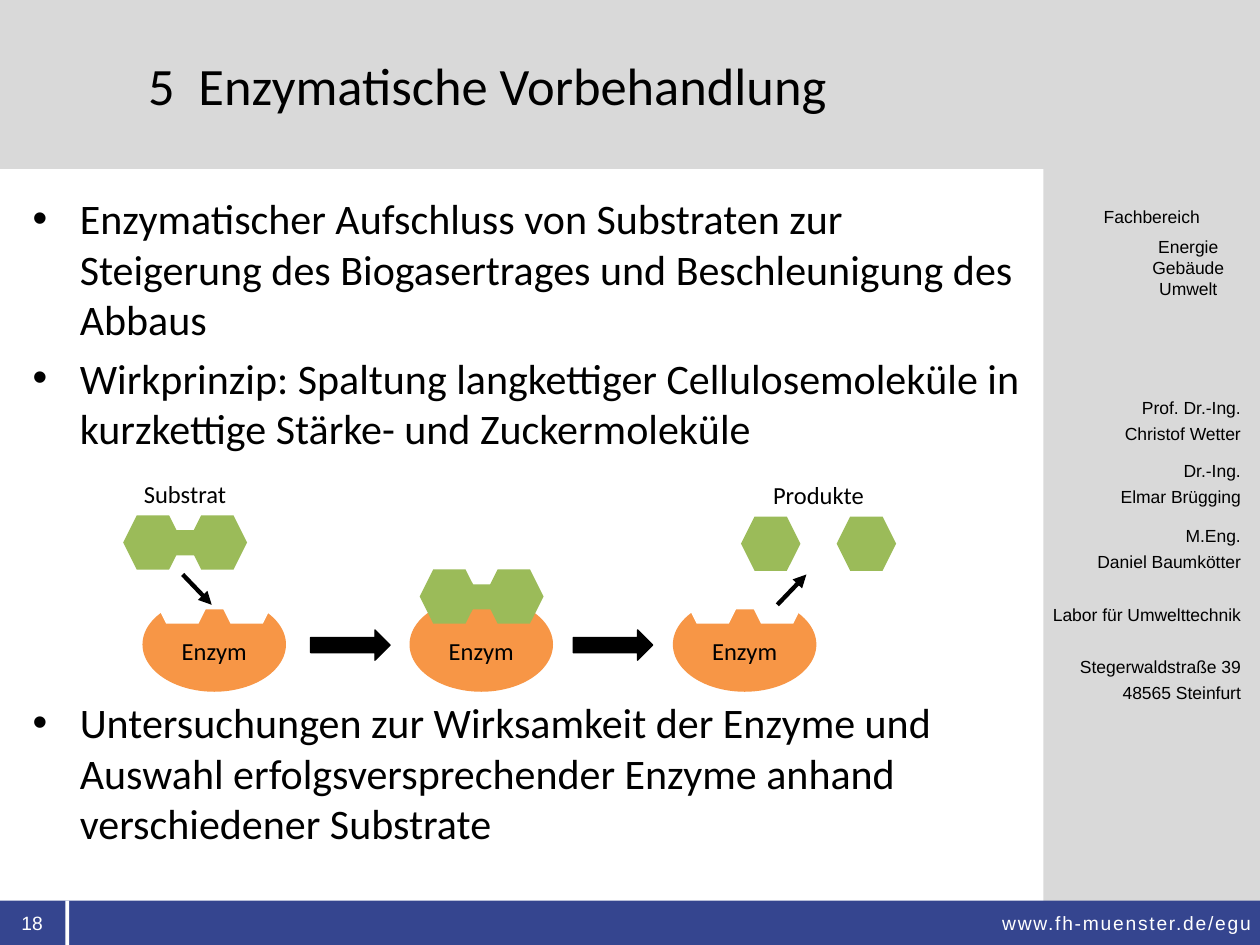
from pptx import Presentation
from pptx import util as u
from pptx.dml.color import RGBColor
from pptx.enum import shapes, text
from pptx.oxml.ns import qn
from lxml import etree

Pt = u.Pt
SHAPE = shapes.MSO_SHAPE
ALIGN = text.PP_ALIGN
MIDDLE = text.MSO_ANCHOR.MIDDLE
BLACK = RGBColor(0x00, 0x00, 0x00)
WHITE = RGBColor(0xFF, 0xFF, 0xFF)
GRAY = RGBColor(0xD9, 0xD9, 0xD9)
BLUE = RGBColor(0x35, 0x45, 0x8F)
ORANGE = RGBColor(0xF7, 0x96, 0x46)
GREEN = RGBColor(0x9B, 0xBB, 0x59)

BODY = {"name": "Calibri", "size": Pt(24)}
LABEL = {"name": "Calibri", "size": Pt(14)}
SIDE = {"name": "Arial", "size": Pt(10)}
FOOT = {"name": "Arial", "size": Pt(11)}


class SlideBuilder:
    """Holds the style and the current slide and adds each kind of element."""

    def __init__(self, prs):
        self.s = prs.slides.add_slide(prs.slide_layouts[5])

    def format(self, target, **values):
        for name, value in values.items():
            setattr(target, name, value)

    def fill_text(self, tf, lines, font, color=BLACK, align=ALIGN.CENTER,
                  gaps=(), spacing=None, bullet=False, tracking=None):
        for i, line in enumerate(lines):
            p = tf.paragraphs[0] if i == 0 else tf.add_paragraph()
            gap = gaps[i] if gaps else 0
            self.format(p, alignment=align, space_before=Pt(gap),
                        line_spacing=spacing)
            if bullet:
                pPr = p._p.get_or_add_pPr()
                pPr.set("marL", str(Pt(27)))
                pPr.set("indent", str(Pt(-27)))
                etree.SubElement(pPr, qn("a:buFont")).set("typeface", "Arial")
                etree.SubElement(pPr, qn("a:buChar")).set("char", "•")
            r = p.add_run()
            r.text = line
            self.format(r.font, **font)
            r.font.color.rgb = color
            if tracking:
                r.font._element.set("spc", str(tracking))

    def title(self, x, y, w, h, line):
        sp = self.s.shapes.title
        self.format(sp, left=Pt(x), top=Pt(y), width=Pt(w), height=Pt(h))
        sp.text_frame.vertical_anchor = MIDDLE
        self.fill_text(sp.text_frame, [line], {"name": "Calibri", "size": Pt(30)})
        sp.element.getparent().append(sp.element)

    def text(self, x, y, w, h, lines, font, anchor=text.MSO_ANCHOR.TOP,
             inset=0, **style):
        tf = self.s.shapes.add_textbox(Pt(x), Pt(y), Pt(w), Pt(h)).text_frame
        self.format(tf, word_wrap=True, vertical_anchor=anchor,
                    margin_left=Pt(inset), margin_right=Pt(inset),
                    margin_top=Pt(inset / 2), margin_bottom=Pt(inset / 2))
        self.fill_text(tf, lines, font, **style)

    def shape(self, kind, x, y, w, h, color):
        sp = self.s.shapes.add_shape(kind, Pt(x), Pt(y), Pt(w), Pt(h))
        sp.shadow.inherit = False
        sp.fill.solid()
        sp.fill.fore_color.rgb = color
        sp.line.fill.background()
        return sp

    def hexagon(self, x, y, color=GREEN):
        self.shape(SHAPE.HEXAGON, x, y, 34, 31, color)

    def substrate(self, x, y, color=GREEN):
        self.hexagon(x, y, color)
        self.hexagon(x + 36.8, y, color)
        self.shape(SHAPE.RECTANGLE, x + 23, y + 8.5, 21.6, 14.4, color)

    def enzyme(self, x, pocket):
        self.shape(SHAPE.OVAL, x, 341.3, 82, 54, ORANGE)
        self.substrate(x + 5.8, 325.4, pocket)
        self.text(x, 360, 82, 24.2, ["Enzym"], LABEL, inset=7.2)

    def step(self, x):
        sp = self.shape(SHAPE.RIGHT_ARROW, x, 360, 45.4, 17.3, BLACK)
        sp.line.color.rgb = BLACK
        sp.line.width = Pt(0.75)

    def arrow(self, x1, y1, x2, y2):
        c = self.s.shapes.add_connector(
            shapes.MSO_CONNECTOR.STRAIGHT, Pt(x1), Pt(y1), Pt(x2), Pt(y2))
        c.line.color.rgb = BLACK
        c.line.width = Pt(2.5)
        etree.SubElement(c.line._get_or_add_ln(), qn("a:tailEnd")).set("type", "triangle")
        etree.SubElement(c.element.spPr, qn("a:effectLst"))


def main():
    prs = Presentation()
    prs.slide_width, prs.slide_height = Pt(720), Pt(540)
    b = SlideBuilder(prs)

    for x, y, w, h, color in [
        (596.2, 0, 123.8, 540, GRAY),
        (0, 0, 720, 96.5, GRAY),
        (0, 514.6, 720, 25.4, BLUE),
        (37.4, 514.6, 2.2, 25.4, WHITE),
    ]:
        b.shape(SHAPE.RECTANGLE, x, y, w, h, color)

    b.text(596.2, 117.5, 123.8, 12, ["Fachbereich"], SIDE)
    b.text(640, 134.8, 78, 36, ["Energie", "Gebäude", "Umwelt"], SIDE)
    b.text(585.2, 224, 123.8, 180, [
        "Prof. Dr.-Ing.", "Christof Wetter", "Dr.-Ing.", "Elmar Brügging",
        "M.Eng.", "Daniel Baumkötter", "Labor für Umwelttechnik",
        "Stegerwaldstraße 39", "48565 Steinfurt",
    ], SIDE, align=ALIGN.RIGHT, spacing=Pt(15), gaps=(0, 0, 6, 0, 7, 0, 15, 15, 0))
    b.text(360, 514.6, 355, 25.4, ["www.fh-muenster.de/egu"], FOOT,
           anchor=MIDDLE, color=WHITE, align=ALIGN.RIGHT, tracking=100)
    b.text(0, 514.6, 36.7, 25.4, ["18"], FOOT, anchor=MIDDLE, color=WHITE)

    b.title(11.5, 11.5, 534.2, 73.5, "5  Enzymatische Vorbehandlung")
    bullets = {"inset": 7.2, "align": ALIGN.LEFT, "bullet": True}
    b.text(11.5, 106.6, 579.6, 160, [
        "Enzymatischer Aufschluss von Substraten zur Steigerung des "
        "Biogasertrages und Beschleunigung des Abbaus",
        "Wirkprinzip: Spaltung langkettiger Cellulosemoleküle in "
        "kurzkettige Stärke- und Zuckermoleküle",
    ], BODY, gaps=(0, 4.8), **bullets)
    b.text(11.5, 394.6, 579.6, 100, [
        "Untersuchungen zur Wirksamkeit der Enzyme und Auswahl "
        "erfolgsversprechender Enzyme anhand verschiedener Substrate",
    ], BODY, **bullets)

    for x, pocket in [(81.4, WHITE), (234, GREEN), (384.5, WHITE)]:
        b.enzyme(x, pocket)
    b.substrate(70.4, 294.5)
    for x in (423.4, 478.1):
        b.hexagon(x, 295.2)
    for x in (177.5, 327.6):
        b.step(x)
    b.text(70.4, 270.2, 70.6, 24.2, ["Substrat"], LABEL, inset=7.2)
    b.text(423.4, 270.7, 88.6, 24.2, ["Produkte"], LABEL, inset=7.2)
    b.arrow(104.4, 328.3, 121, 345.6)
    b.arrow(444.2, 345.6, 460.8, 328.3)
    prs.save("out.pptx")


if __name__ == "__main__":
    main()
